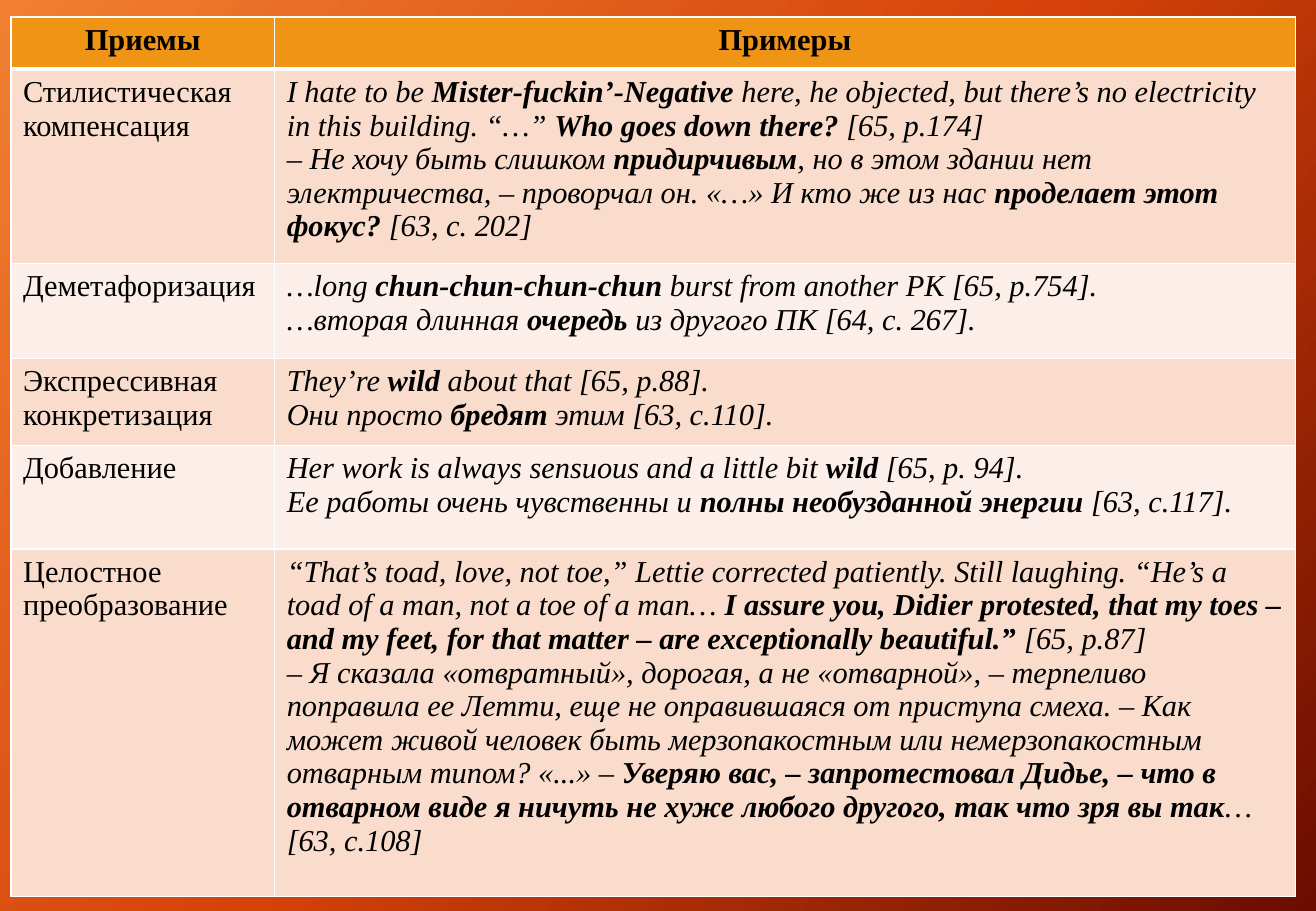
from copy import deepcopy

from lxml import etree
from pptx import Presentation
from pptx.dml.color import RGBColor
from pptx.enum.text import PP_ALIGN
from pptx.oxml.ns import qn
from pptx.util import Inches, Pt

LEFT, CENTER = PP_ALIGN.LEFT, PP_ALIGN.CENTER
COLS = [2.17, 8.4]
ROWS = [0.43, 1.6, 0.78, 0.72, 0.85, 2.86]
HEAD, DARK, PALE = "F09415", "F9DCCC", "FCEEE8"


def color(code):
    return RGBColor.from_string(code)


def write(par, text, bold=False, italic=False, align=LEFT):
    """Fill a paragraph; each * switches bold on or off."""
    par.alignment = align
    for i, part in enumerate(text.split("*")):
        if part:
            run = par.add_run()
            run.text = part
            font = run.font
            font.name, font.size = "Times New Roman", Pt(18)
            font.bold, font.italic = bold or i % 2 == 1, italic
            font.color.rgb = color("000000")


prs = Presentation()
prs.slide_width, prs.slide_height = Inches(10.83), Inches(7.5)
slide = prs.slides.add_slide(prs.slide_layouts[6])

# Background: three-stop gradient
fill = slide.background.fill
fill.gradient()
fill.gradient_angle = 318
stops = slide.element.find(".//" + qn("a:gsLst"))
stops.insert(1, deepcopy(stops[0]))
for stop, pos, code in zip(fill.gradient_stops, (0, 0.5, 1),
                           ("F18031", "D54209", "6A0D00")):
    stop.position = pos
    stop.color.rgb = color(code)

# Wording: one tuple of paragraphs per cell
data = [
    (("Приемы",), ("Примеры",)),
    (("Стилистическая компенсация",), (
        "I hate to be *Mister-fuckin’-Negative* here, he objected, but "
        "there’s no electricity in this building. “…” "
        "*Who goes down there?* [65, p.174]",
        "– Не хочу быть слишком *придирчивым*, но в этом здании нет "
        "электричества, – проворчал он. «…» И кто же из нас "
        "*проделает этот фокус? *[63, c. 202]")),
    (("Деметафоризация",), (
        "…long *chun-chun-chun-chun* burst from another PK [65, p.754].",
        "…вторая длинная *очередь* из другого ПК [64, c. 267].")),
    (("Экспрессивная конкретизация",), (
        "They’re *wild *about that [65, p.88].",
        "Они просто *бредят* этим [63, c.110].")),
    (("Добавление",), (
        "Her work is always sensuous and a little bit *wild *[65, p. 94].",
        "Ее работы очень чувственны и *полны необузданной энергии *"
        "[63, c.117].")),
    (("Целостное преобразование",), (
        "“That’s toad, love, not toe,” Lettie corrected patiently. Still "
        "laughing. “He’s a toad of a man, not a toe of a man… *I assure you, "
        "Didier protested, that my toes – and my feet, for that matter – "
        "are exceptionally beautiful.” *[65, p.87]",
        "– Я сказала «отвратный», дорогая, а не «отварной», – терпеливо "
        "поправила ее Летти, еще не оправившаяся от приступа смеха. – Как "
        "может живой человек быть мерзопакостным или немерзопакостным "
        "отварным типом? «...» – *Уверяю вас, – запротестовал Дидье, – что в "
        "отварном виде я ничуть не хуже любого другого, так что зря вы "
        "так*… [63, c.108]")),
]

# Table grid
table = slide.shapes.add_table(
    len(ROWS), len(COLS), Inches(0.09), Inches(0.14),
    Inches(sum(COLS)), Inches(sum(ROWS))).table
for col, width in zip(table.columns, COLS):
    col.width = Inches(width)
for row, height in zip(table.rows, ROWS):
    row.height = Inches(height)

# Cells: text, fill and white borders
for r, line in enumerate(data):
    for c, pars in enumerate(line):
        cell = table.cell(r, c)
        frame = cell.text_frame
        for i, text in enumerate(pars):
            par = frame.add_paragraph() if i else frame.paragraphs[0]
            write(par, text, bold=r == 0, italic=r > 0 and c == 1,
                  align=LEFT if r else CENTER)
        cell.fill.solid()
        cell.fill.fore_color.rgb = color(
            HEAD if r == 0 else DARK if r % 2 else PALE)
        props = cell._tc.get_or_add_tcPr()
        for i, side in enumerate("LRTB"):
            thick = (r, side) in ((0, "B"), (1, "T"))
            edge = etree.Element(qn("a:ln" + side),
                                 w=str(Pt(3 if thick else 1)))
            paint = etree.SubElement(edge, qn("a:solidFill"))
            etree.SubElement(paint, qn("a:srgbClr"), val="FFFFFF")
            props.insert(i, edge)

prs.save("out.pptx")
